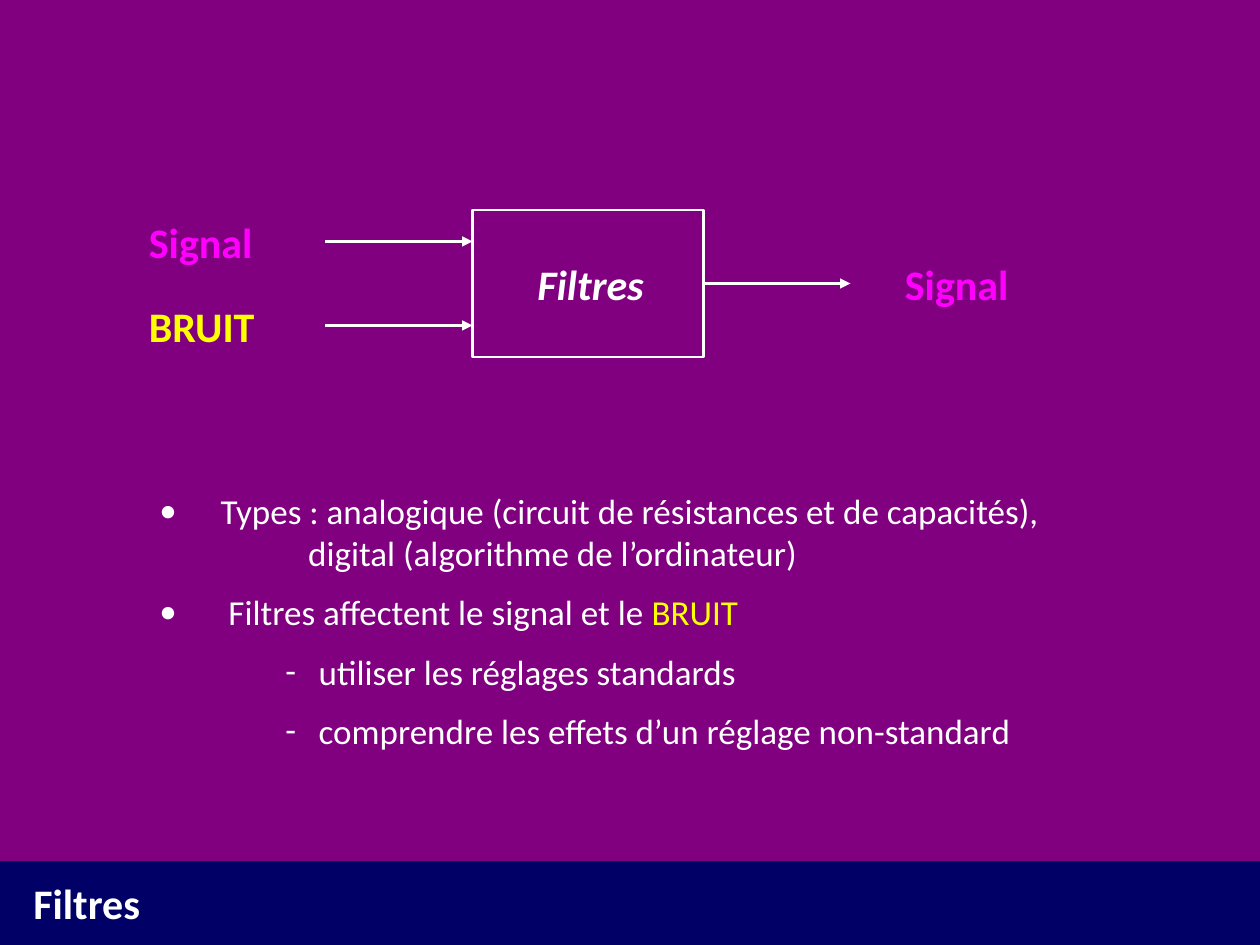
from dataclasses import dataclass

import pptx
import pptx.dml.color
import pptx.enum.shapes
import pptx.enum.text
import pptx.oxml.ns
import pptx.oxml.xmlchemy
import pptx.util
from lxml import etree

Pt = pptx.util.Pt
RGBColor = pptx.dml.color.RGBColor
qn = pptx.oxml.ns.qn

NAVY = RGBColor(0x00, 0x00, 0x66)
PURPLE = RGBColor(0x80, 0x00, 0x80)
WHITE = RGBColor(0xFF, 0xFF, 0xFF)
MAGENTA = RGBColor(0xFF, 0x00, 0xFF)
YELLOW = RGBColor(0xFF, 0xFF, 0x00)
FONT = "Calibri"


@dataclass(frozen=True)
class Label:
    text: str
    left: float
    top: float
    width: float
    color: RGBColor
    italic: bool = False


@dataclass(frozen=True)
class Arrow:
    start: float
    end: float
    y: float


@dataclass(frozen=True)
class Point:
    runs: tuple[tuple[str, RGBColor], ...]
    margin: float
    hanging: float = 0
    bullet: str = ""
    before: float = 10


LABELS = (
    Label("Filtres", 12, 498, 480, WHITE),
    Label("Signal", 78, 120, 96, MAGENTA),
    Label("BRUIT", 78, 168, 120, YELLOW),
    Label("Signal", 510, 144, 96, MAGENTA),
    Label("Filtres", 300, 144, 87, WHITE, italic=True),
)
INPUTS = (Arrow(186, 270, 138), Arrow(186, 270, 186))
OUTPUT = Arrow(402, 486, 162)
POINTS = (
    Point((("Types : analogique (circuit de résistances et de capacités),", WHITE),),
          35, 35, "•", before=0),
    Point((("digital (algorithme de l’ordinateur)", WHITE),), 85, before=0),
    Point((("Filtres affectent le signal et le ", WHITE), ("BRUIT", YELLOW)),
          39.5, 39.5, "•"),
    Point((("utiliser les réglages standards", WHITE),), 91, 19, "-"),
    Point((("comprendre les effets d’un réglage non-standard", WHITE),), 91, 19, "-"),
)


def add_rectangle(slide, left: float, top: float, width: float, height: float):
    rectangle = slide.shapes.add_shape(
        pptx.enum.shapes.MSO_SHAPE.RECTANGLE, Pt(left), Pt(top), Pt(width), Pt(height))
    rectangle.shadow.inherit = False
    return rectangle


def add_text_frame(slide, left: float, top: float, width: float, height: float):
    frame = slide.shapes.add_textbox(Pt(left), Pt(top), Pt(width), Pt(height)).text_frame
    frame.word_wrap = True
    return frame


def add_run(paragraph, text: str, size: float, color: RGBColor,
            bold: bool = False, italic: bool = False) -> None:
    run = paragraph.add_run()
    run.text = text
    run.font.name = FONT
    run.font.size = Pt(size)
    run.font.bold = bold
    run.font.italic = italic
    run.font.color.rgb = color


def add_label(slide, label: Label) -> None:
    frame = add_text_frame(slide, label.left, label.top, label.width, 36)
    add_run(frame.paragraphs[0], label.text, 24, label.color, True, label.italic)


def add_arrow(slide, arrow: Arrow):
    connector = slide.shapes.add_connector(
        pptx.enum.shapes.MSO_CONNECTOR.STRAIGHT,
        Pt(arrow.start), Pt(arrow.y), Pt(arrow.end), Pt(arrow.y))
    connector.line.color.rgb = WHITE
    connector.line.width = Pt(1.5)
    properties = connector._element.spPr
    etree.SubElement(properties.find(qn("a:ln")), qn("a:tailEnd"), type="triangle")
    etree.SubElement(properties, qn("a:effectLst"))
    return connector


def add_point(paragraph, point: Point) -> None:
    paragraph.space_before = Pt(point.before)
    properties = paragraph._p.get_or_add_pPr()
    properties.set("marL", str(int(Pt(point.margin))))
    properties.set("indent", str(-int(Pt(point.hanging))))
    if point.bullet:
        etree.SubElement(properties, qn("a:buFont"), typeface=FONT)
        etree.SubElement(properties, qn("a:buChar"), char=point.bullet)
    else:
        etree.SubElement(properties, qn("a:buNone"))
    for text, color in point.runs:
        add_run(paragraph, text, 20, color)


def main() -> None:
    deck = pptx.Presentation()
    deck.slide_width, deck.slide_height = Pt(720), Pt(540)
    slide = deck.slides.add_slide(deck.slide_layouts[6])

    # Navy background, left visible as the title band under the purple panel
    slide.background.fill.solid()
    slide.background.fill.fore_color.rgb = NAVY
    panel = add_rectangle(slide, 0, 0, 720, 492)
    panel.fill.solid()
    panel.fill.fore_color.rgb = PURPLE
    panel.line.fill.background()

    # Filter box with its inputs and output
    filter_box = add_rectangle(slide, 270, 120, 132, 84)
    filter_box.fill.background()
    filter_box.line.color.rgb = WHITE
    filter_box.line.width = Pt(1.5)
    for arrow in INPUTS:
        add_arrow(slide, arrow)
    add_arrow(slide, OUTPUT).begin_connect(filter_box, 3)

    # Title and diagram labels
    for label in LABELS:
        add_label(slide, label)

    # Explanatory points
    explanation = add_text_frame(slide, 84, 276, 564, 165)
    for index, point in enumerate(POINTS):
        paragraph = explanation.add_paragraph() if index else explanation.paragraphs[0]
        add_point(paragraph, point)

    deck.save("out.pptx")


if __name__ == "__main__":
    main()
